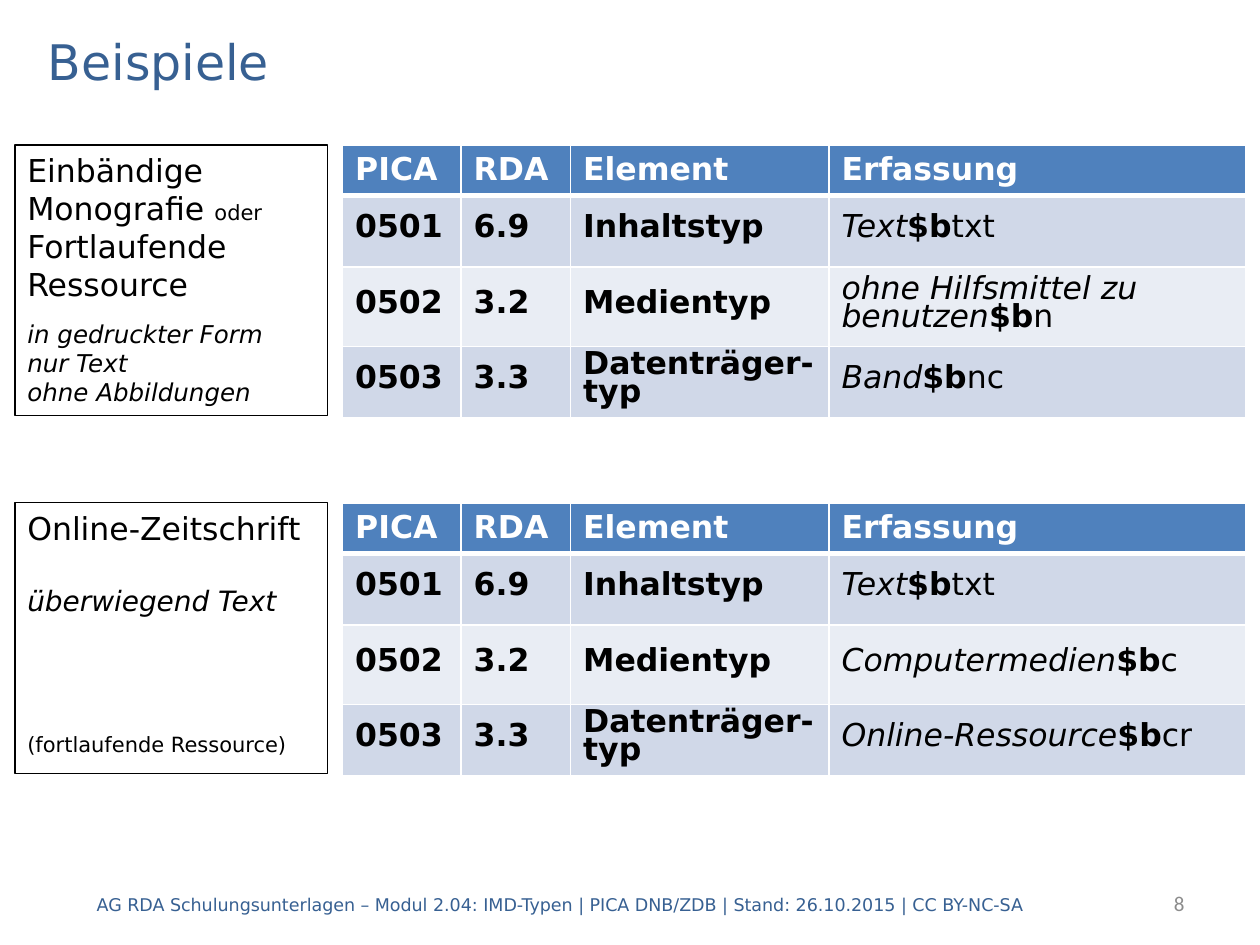
from lxml.etree import SubElement as Sub
from pptx import Presentation
from pptx.dml.color import RGBColor as RGB
from pptx.enum.shapes import MSO_SHAPE as Shape
from pptx.enum.text import MSO_ANCHOR as Anchor, PP_ALIGN as Align
from pptx.oxml.ns import qn
from pptx.util import Pt

HUE = {"blue": "376092", "gray": "8C8C8C", "black": "000000", "white": "FFFFFF",
       "head": "4F81BD", "odd": "D0D8E8", "even": "E9EDF4"}
SANS = "DejaVu Sans"


def write(frame, paras, hue, font=SANS):
    """Fill a frame with (runs, paragraph format) pairs; a run is (text, size, style)."""
    frame.word_wrap = True
    for i, (runs, form) in enumerate(paras):
        para = frame.add_paragraph() if i else frame.paragraphs[0]
        for key, val in form.items():
            setattr(para, key, val)
        for text, size, style in runs:
            run = para.add_run()
            run.text = text
            look = {"name": font, "size": Pt(size), "bold": "b" in style, "italic": "i" in style}
            for key, val in look.items():
                setattr(run.font, key, val)
            run.font.color.rgb = RGB.from_string(HUE[hue])


def edge(cell, sides):
    """Draw white cell borders, given as side: width in points."""
    props = cell._tc.get_or_add_tcPr()
    for side, width in sides.items():
        line = Sub(props, qn(f"a:ln{side}"), w=str(Pt(width)))
        fill = Sub(line, qn("a:solidFill"))
        Sub(fill, qn("a:srgbClr"), val=HUE["white"])


deck = Presentation()
deck.slide_width, deck.slide_height = Pt(720), Pt(540)
slide = deck.slides.add_slide(deck.slide_layouts[6])
shapes = slide.shapes

# Title, footer and page number
footer = ("AG RDA Schulungsunterlagen – Modul 2.04: IMD-Typen | PICA DNB/ZDB"
          " | Stand: 26.10.2015 | CC BY-NC-SA")
labels = [
    ("Beispiele", 28, "blue", SANS, Align.LEFT, (20.2, 14.4, 680.4, 40.3)),
    (footer, 10, "blue", SANS, Align.LEFT, (48.2, 502.6, 592.6, 28.8)),
    ("8", 12, "gray", "Calibri", Align.RIGHT, (569.5, 501.8, 114.5, 28.8)),
]
for text, size, hue, font, align, area in labels:
    box = shapes.add_textbox(*map(Pt, area))
    box.text_frame.vertical_anchor = Anchor.MIDDLE
    write(box.text_frame, [([(text, size, "")], {"alignment": align})], hue, font)

# Two examples: a described resource on the left, its coding on the right
heads = ["PICA", "RDA", "Element", "Erfassung"]
fields = [("0501", "6.9", "Inhaltstyp"), ("0502", "3.2", "Medientyp"),
          ("0503", "3.3", "Datenträger-typ")]
widths = [67.7, 62.6, 147.6, 238.3]
heights = [26.2, 41, 45.4, 41]
body = {"line_spacing": Pt(16), "space_before": Pt(6), "space_after": Pt(6)}

print_notes = [
    ([("Einbändige Monografie ", 18, ""), ("oder", 12, "")], {}),
    ([("Fortlaufende Ressource", 18, "")], {}),
    ([("in gedruckter Form", 14, "i")], {"space_before": Pt(9.3)}),
    ([("nur Text", 14, "i")], {}),
    ([("ohne Abbildungen", 14, "i")], {}),
]
web_notes = [
    ([("Online-Zeitschrift", 18, "")], {}),
    ([("überwiegend Text", 16, "i")], {"space_before": Pt(21)}),
    ([("(fortlaufende Ressource)", 12, "")], {"space_before": Pt(65.2)}),
]
cases = [
    (82.8, print_notes, [("Text", "txt"), ("ohne Hilfsmittel zu benutzen", "n"), ("Band", "nc")]),
    (287.3, web_notes, [("Text", "txt"), ("Computermedien", "c"), ("Online-Ressource", "cr")]),
]
for top, notes, codes in cases:
    card = shapes.add_shape(Shape.RECTANGLE, Pt(8.5), Pt(top), Pt(178.6), Pt(154.8))
    card.shadow.inherit = False
    card.fill.solid()
    card.fill.fore_color.rgb = RGB.from_string(HUE["white"])
    card.line.color.rgb = RGB.from_string(HUE["black"])
    card.line.width = Pt(0.75)
    card.text_frame.vertical_anchor = Anchor.TOP
    for _, form in notes:
        form["alignment"] = Align.LEFT
    write(card.text_frame, notes, "black")

    grid = shapes.add_table(4, 4, Pt(195.8), Pt(top), Pt(sum(widths)), Pt(sum(heights))).table
    for col, width in zip(grid.columns, widths):
        col.width = Pt(width)
    for row, height in zip(grid.rows, heights):
        row.height = Pt(height)

    rows = [[[(head, 18, "b")] for head in heads]]
    for field, (term, code) in zip(fields, codes):
        rows.append([[(text, 18, "b")] for text in field]
                    + [[(term, 18, "i"), ("$b", 18, "b"), (code, 18, "")]])
    for r, row in enumerate(rows):
        for c, runs in enumerate(row):
            cell = grid.cell(r, c)
            edge(cell, {"L": 1, "R": 1, "T": 3 if r == 1 else 1, "B": 1 if r else 3})
            cell.fill.solid()
            shade = "odd" if r % 2 else "even"
            cell.fill.fore_color.rgb = RGB.from_string(HUE[shade if r else "head"])
            cell.vertical_anchor = Anchor.MIDDLE if r else Anchor.TOP
            write(cell.text_frame, [(runs, body if r else {})], "black" if r else "white")

deck.save("out.pptx")
